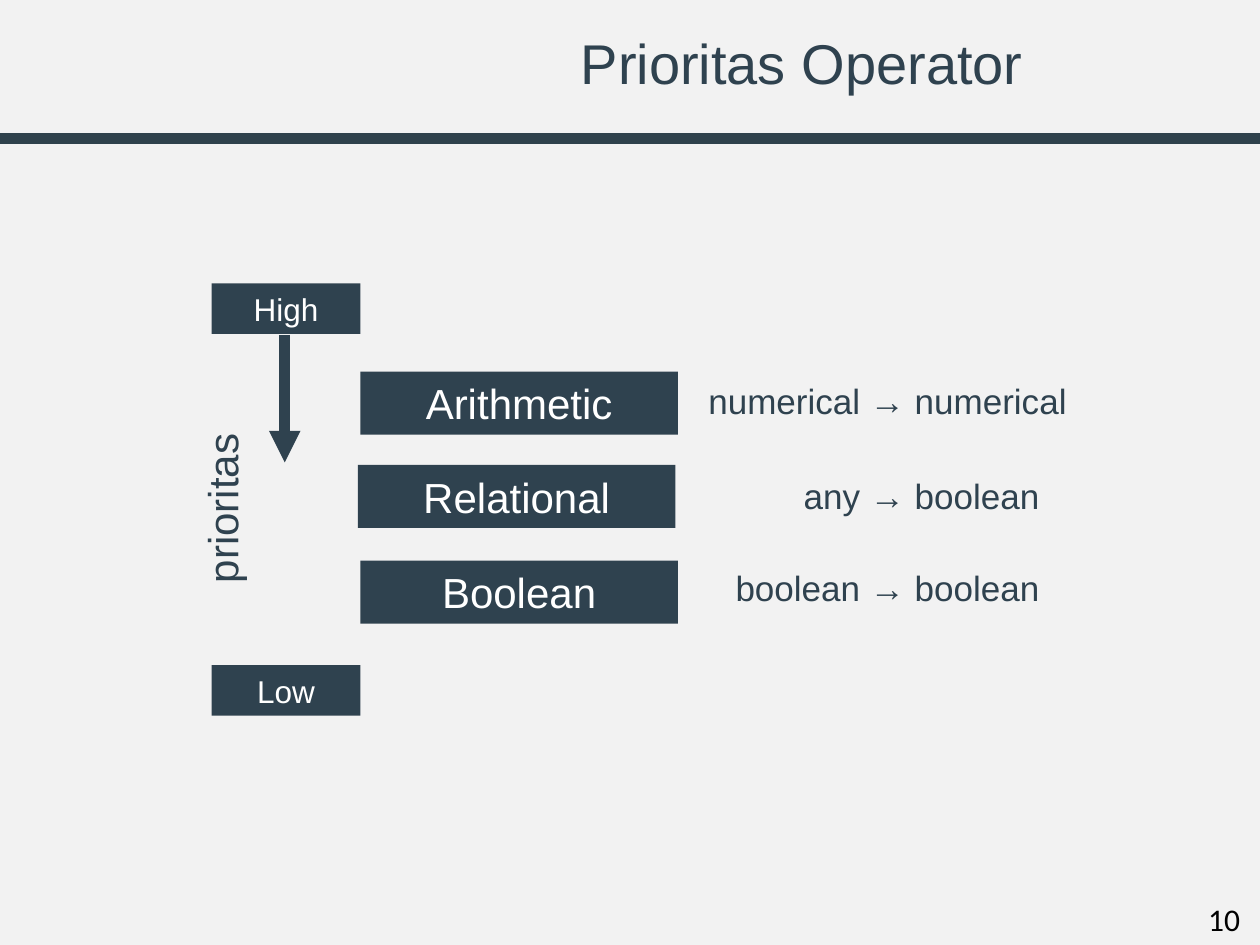
"""Build the slide on operator priority."""
from lxml import etree
from pptx import Presentation
from pptx import util as u
from pptx.dml.color import RGBColor
from pptx.enum import shapes, text
from pptx.oxml.ns import qn

SLATE = RGBColor(0x2F, 0x42, 0x4F)
RULE = RGBColor(0x2F, 0x42, 0x4C)
PAPER = RGBColor(0xF2, 0xF2, 0xF2)
WHITE = RGBColor(0xFF, 0xFF, 0xFF)
BLACK = RGBColor(0, 0, 0)

LEVELS = [("High", 2.25), ("Low", 5.28)]
OPERATORS = [
    ("Arithmetic", 2.86, 2.95, "numerical → numerical", 5.43, 2.96),
    ("Relational", 2.84, 3.69, "any → boolean", 5.7, 3.72),
    ("Boolean", 2.86, 4.45, "boolean → boolean", 5.43, 4.45),
]


def write(shape, words, size, color, font="Arial", align=text.PP_ALIGN.CENTER):
    """Write one line of text in a shape and return its paragraph."""
    para = shape.text_frame.paragraphs[0]
    para.alignment = align
    span = para.add_run()
    span.text = words
    span.font.size = u.Pt(size)
    span.font.name = font
    span.font.color.rgb = color
    return para


def add_label(page, words, place, size, color=SLATE, wrap=True, **style):
    """Add a text box and return it with its paragraph."""
    box = page.shapes.add_textbox(*map(u.Inches, place))
    box.text_frame.word_wrap = wrap
    return box, write(box, words, size, color, **style)


def add_block(page, words, place, size):
    """Add a filled rectangle with centred white text."""
    block = page.shapes.add_shape(
        shapes.MSO_SHAPE.RECTANGLE, *map(u.Inches, place))
    block.shadow.inherit = False
    block.fill.solid()
    block.fill.fore_color.rgb = SLATE
    block.line.fill.background()
    block.text_frame.vertical_anchor = text.MSO_ANCHOR.MIDDLE
    write(block, words, size, WHITE)


def add_line(page, ends, color, arrow=False):
    """Add a thick straight line, with an arrowhead if asked."""
    line = page.shapes.add_connector(
        shapes.MSO_CONNECTOR.STRAIGHT, *map(u.Inches, ends))
    line.line.color.rgb = color
    line.line.width = u.Pt(6)
    if arrow:
        etree.SubElement(line.line._get_or_add_ln(), qn("a:tailEnd"), type="triangle")
    etree.SubElement(line._element.spPr, qn("a:effectLst"))


def add_title(page, words):
    """Place and fill the title placeholder."""
    title = page.shapes.title
    title.left, title.top, title.width, title.height = map(
        u.Inches, (3.24, 0.23, 6.25, 0.6))
    title.text_frame.vertical_anchor = text.MSO_ANCHOR.MIDDLE
    write(title, words, 32, SLATE).line_spacing = 0.9


def add_frame(page, number):
    """Add the rule under the title and the page number."""
    add_line(page, (0, 1.1, 10, 1.1), RULE)
    add_label(page, number, (9.49, 7.09, 0.5, 0.4), 18, BLACK, wrap=False,
              font="Calibri", align=text.PP_ALIGN.LEFT)


def add_priorities(page):
    """Add the priority scale and the operators with their types."""
    box, para = add_label(page, "prioritas", (1.04, 3.65, 1.59, 0.56), 24,
                          align=text.PP_ALIGN.LEFT)
    box.rotation = 270
    para.line_spacing = 0.9
    for name, left, top, types, types_left, types_top in OPERATORS:
        add_block(page, name, (left, top, 2.52, 0.5), 24)
        add_label(page, types, (types_left, types_top, 3.23, 0.44), 20)
    for name, top in LEVELS:
        add_block(page, name, (1.68, top, 1.18, 0.4), 18)
    add_line(page, (2.26, 2.66, 2.26, 3.67), SLATE, arrow=True)


def main():
    """Build and save the deck."""
    deck = Presentation()
    deck.slide_width, deck.slide_height = u.Inches(10), u.Inches(7.5)
    page = deck.slides.add_slide(deck.slide_layouts.get_by_name("Title Only"))
    page.background.fill.solid()
    page.background.fill.fore_color.rgb = PAPER
    add_frame(page, "10")
    add_title(page, "Prioritas Operator")
    add_priorities(page)
    deck.save("out.pptx")


if __name__ == "__main__":
    main()
